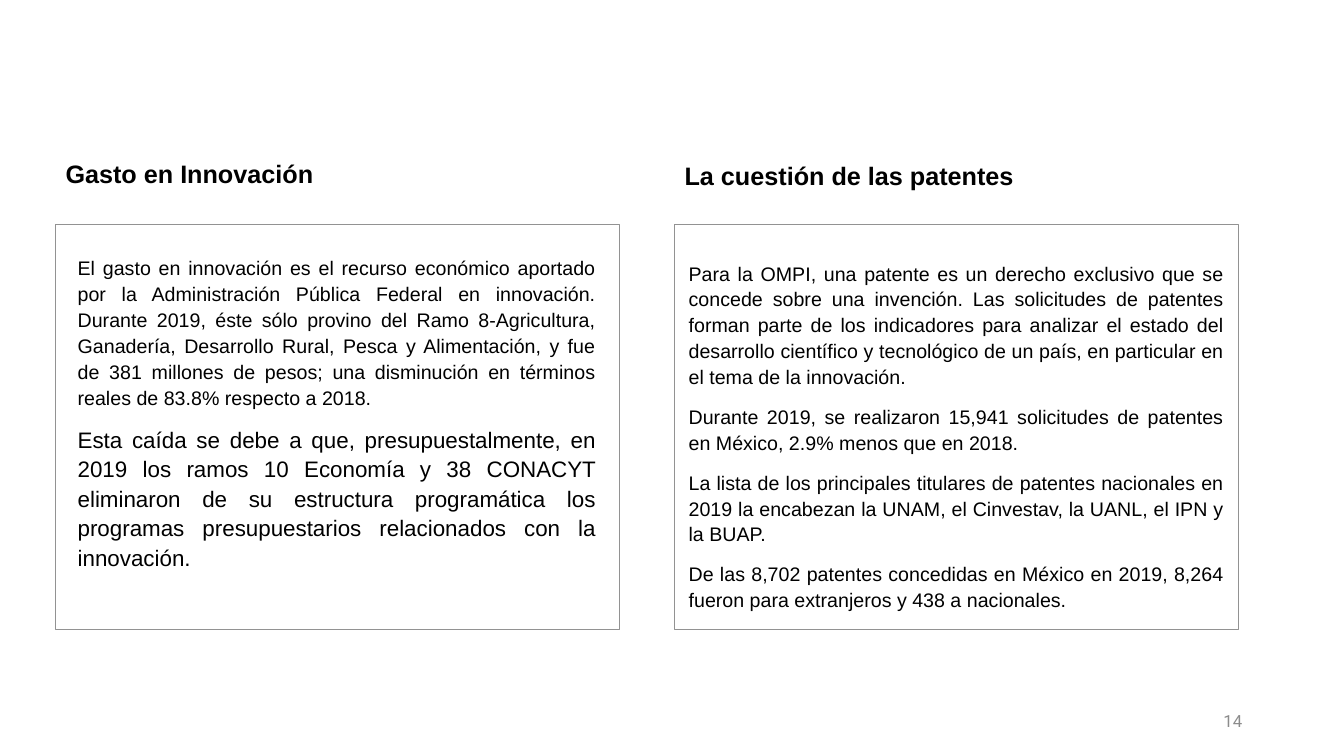
import pptx
import pptx.util
import pptx.dml.color
import pptx.enum.shapes
import pptx.enum.text
import pptx.oxml.ns
from lxml import etree

Inches, Pt = pptx.util.Inches, pptx.util.Pt
ALIGN = pptx.enum.text.PP_ALIGN
ANCHOR = pptx.enum.text.MSO_ANCHOR

# Each text block: placeholder index, (left, top, width, height), paragraphs as (text, size)
HEADINGS = [
    (1, (0.55, 1.49, 2.75, 0.72), [("Gasto en Innovación", 18)]),
    (3, (6.69, 1.51, 3.99, 0.72), [("La cuestión de las patentes", 18)]),
]
BODIES = [
    (2, (0.67, 2.47, 5.34, 3.6), [
        ("El gasto en innovación es el recurso económico aportado por la Administración "
         "Pública Federal en innovación. Durante 2019, éste sólo provino del Ramo "
         "8-Agricultura, Ganadería, Desarrollo Rural, Pesca y Alimentación, y fue de 381 "
         "millones de pesos; una disminución en términos reales de 83.8% respecto a 2018.", 14),
        ("Esta caída se debe a que, presupuestalmente, en 2019 los ramos 10 Economía y 38 "
         "CONACYT eliminaron de su estructura programática los programas presupuestarios "
         "relacionados con la innovación.", 16),
    ]),
    (4, (6.73, 2.52, 5.51, 3.7), [
        ("Para la OMPI, una patente es un derecho exclusivo que se concede sobre una "
         "invención. Las solicitudes de patentes forman parte de los indicadores para "
         "analizar el estado del desarrollo científico y tecnológico de un país, en "
         "particular en el tema de la innovación.", 14),
        ("Durante 2019, se realizaron 15,941 solicitudes de patentes en México, 2.9% menos "
         "que en 2018.", 14),
        ("La lista de los principales titulares de patentes nacionales en 2019 la encabezan "
         "la UNAM, el Cinvestav, la UANL, el IPN y la BUAP.", 14),
        ("De las 8,702 patentes concedidas en México en 2019, 8,264 fueron para extranjeros "
         "y 438 a nacionales.", 14),
    ]),
]
PAGE_NUMBER = "14"
FRAME_LEFTS = (0.55, 6.69)
FRAME_TOP, FRAME_WIDTH, FRAME_HEIGHT = 2.22, 5.59, 4.02
COMPARISON_LAYOUT = 4


def color(value):
    return pptx.dml.color.RGBColor.from_string(value)


def set_all(target, formats):
    for name, value in formats.items():
        setattr(target, name, value)


def write(paragraph, text, size, face, hex_color, bold=False):
    run = paragraph.add_run()
    run.text = text
    set_all(run.font, {"name": face, "size": Pt(size), "bold": bold})
    run.font.color.rgb = color(hex_color)


def remove_bullet(paragraph):
    properties = paragraph._p.get_or_add_pPr()
    properties.set("marL", "0")
    properties.set("indent", "0")
    etree.SubElement(properties, pptx.oxml.ns.qn("a:buNone"))


def fill_placeholder(slide, block, align, bold):
    index, box, paragraphs = block
    holder = slide.placeholders[index]
    set_all(holder, dict(zip(("left", "top", "width", "height"), map(Inches, box))))
    frame = holder.text_frame
    set_all(frame, {"word_wrap": True, "vertical_anchor": ANCHOR.TOP,
                    "auto_size": pptx.enum.text.MSO_AUTO_SIZE.NONE})
    for position, (text, size) in enumerate(paragraphs):
        paragraph = frame.add_paragraph() if position else frame.paragraphs[0]
        set_all(paragraph, {"alignment": align, "line_spacing": 1.1,
                            "space_before": Pt(10), "space_after": Pt(0)})
        remove_bullet(paragraph)
        write(paragraph, text, size, "Arial", "000000", bold)


def add_frame(slide, left):
    frame = slide.shapes.add_shape(
        pptx.enum.shapes.MSO_SHAPE.RECTANGLE,
        *map(Inches, (left, FRAME_TOP, FRAME_WIDTH, FRAME_HEIGHT)))
    frame.shadow.inherit = False
    frame.fill.background()
    frame.line.color.rgb = color("929292")
    frame.line.width = Pt(0.25)


def add_page_number(slide):
    frame = slide.shapes.add_textbox(*map(Inches, (9.42, 6.95, 3, 0.4))).text_frame
    set_all(frame, {"word_wrap": True, "vertical_anchor": ANCHOR.MIDDLE})
    paragraph = frame.paragraphs[0]
    paragraph.alignment = ALIGN.RIGHT
    write(paragraph, PAGE_NUMBER, 12, "Roboto", "8C8C8C")


def main():
    deck = pptx.Presentation()
    deck.slide_width, deck.slide_height = Inches(13.33), Inches(7.5)
    slide = deck.slides.add_slide(deck.slide_layouts[COMPARISON_LAYOUT])
    title = slide.shapes.title.element
    title.getparent().remove(title)

    for heading in HEADINGS:
        fill_placeholder(slide, heading, ALIGN.LEFT, bold=True)
    for body in BODIES:
        fill_placeholder(slide, body, ALIGN.JUSTIFY, bold=False)
    for left in FRAME_LEFTS:
        add_frame(slide, left)
    add_page_number(slide)
    deck.save("out.pptx")


if __name__ == "__main__":
    main()
